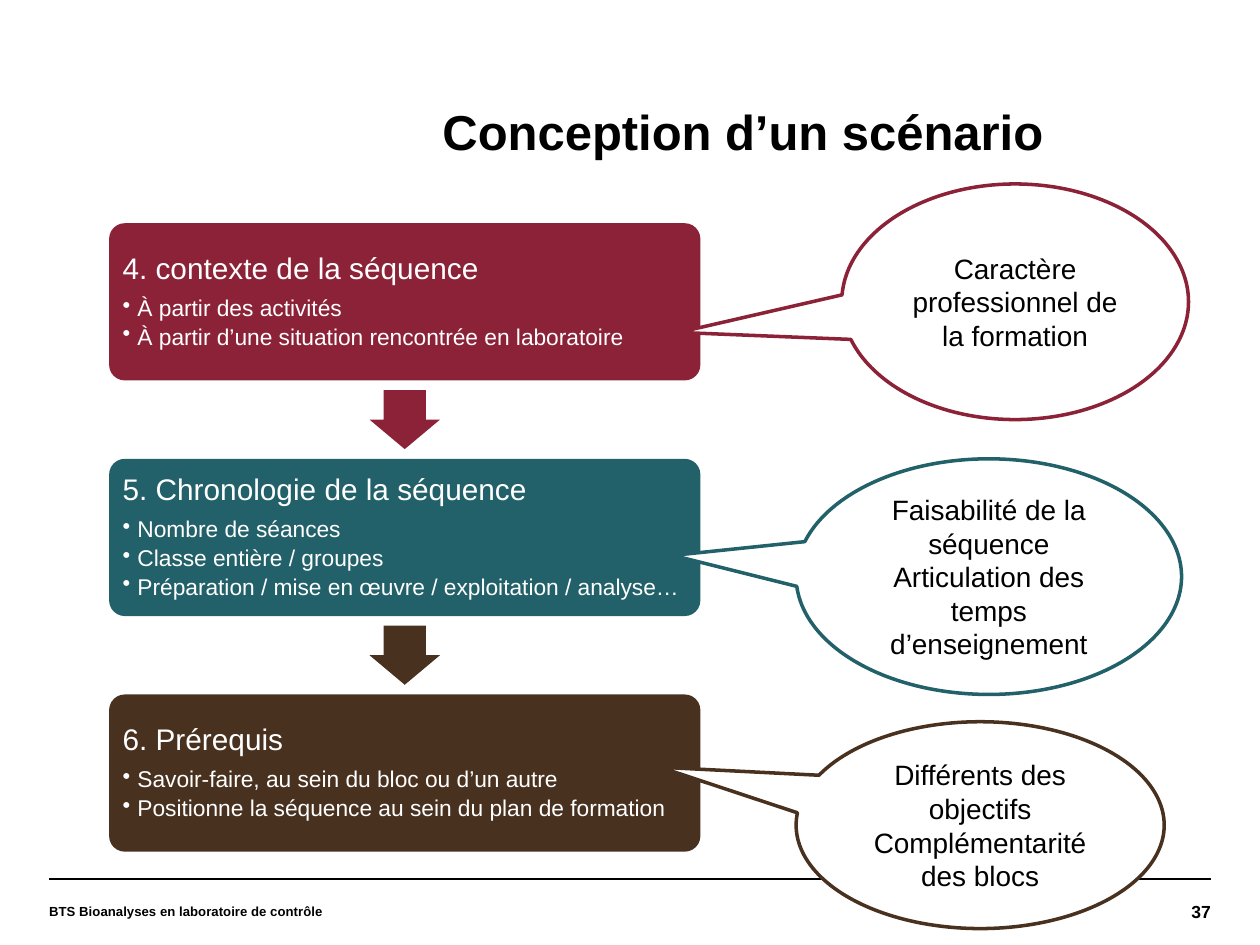
from collections import namedtuple
from dataclasses import dataclass
from lxml.etree import SubElement
from pptx import Presentation
from pptx.dml.color import RGBColor
from pptx.enum.shapes import MSO_CONNECTOR, MSO_SHAPE
from pptx.enum.text import MSO_ANCHOR, PP_ALIGN
from pptx.oxml.ns import qn
from pptx.util import Cm, Pt


@dataclass(frozen=True)
class Theme:
    font: str = "Arial"
    black: str = "000000"
    white: str = "FFFFFF"
    wine: str = "8C2237"
    teal: str = "226169"
    brown: str = "49311F"
    title: float = 28
    head: float = 17
    item: float = 13
    bubble: float = 16
    footer: float = 7.5
    number: float = 10


THEME = Theme()
Box = namedtuple("Box", "left top width height")

STEPS = [
    ("4. contexte de la séquence",
     ["À partir des activités",
      "À partir d’une situation rencontrée en laboratoire"], THEME.wine),
    ("5. Chronologie de la séquence",
     ["Nombre de séances", "Classe entière / groupes",
      "Préparation / mise en œuvre / exploitation / analyse…"], THEME.teal),
    ("6. Prérequis",
     ["Savoir-faire, au sein du bloc ou d’un autre",
      "Positionne la séquence au sein du plan de formation"], THEME.brown),
]
ARROWS = [THEME.wine, THEME.brown]
BUBBLES = [
    (Box(16.97, 3.71, 6.99, 4.75), (-0.97, 0.13), THEME.wine,
     ["Caractère professionnel de la formation"]),
    (Box(16.05, 9.25, 7.77, 4.75), (-0.82, -0.09), THEME.teal,
     ["Faisabilité de la séquence",
      "Articulation des temps d’enseignement"]),
    (Box(16.05, 14.55, 7.42, 4.17), (-0.87, -0.28), THEME.brown,
     ["Différents des objectifs", "Complémentarité des blocs"]),
]


def color(code):
    return RGBColor.from_string(code)


def place(box):
    return [Cm(part) for part in box]


def style(par, size, tone, bold=False, align=PP_ALIGN.LEFT):
    par.alignment = align
    for run in par.runs:
        font = run.font
        font.name, font.size, font.bold = THEME.font, Pt(size), bold
        font.color.rgb = color(tone)


def pad(frame, across, down, anchor=MSO_ANCHOR.MIDDLE):
    frame.word_wrap = True
    frame.vertical_anchor = anchor
    frame.margin_left = frame.margin_right = Cm(across)
    frame.margin_top = frame.margin_bottom = Cm(down)


def add_shape(slide, kind, box, fill, levels):
    shape = slide.shapes.add_shape(kind, *place(box))
    shape.shadow.inherit = False
    shape.fill.solid()
    shape.fill.fore_color.rgb = color(fill)
    shape.line.fill.background()
    for index, level in enumerate(levels):
        shape.adjustments[index] = level
    return shape


def add_title(slide, box, text):
    title = slide.shapes.title
    title.left, title.top, title.width, title.height = place(box)
    frame = title.text_frame
    pad(frame, 0, 0, MSO_ANCHOR.TOP)
    frame.text = text
    frame.paragraphs[0].line_spacing = 0.9
    style(frame.paragraphs[0], THEME.title, THEME.black, True)


def add_label(slide, box, text, size, align):
    frame = slide.shapes.add_textbox(*place(box)).text_frame
    pad(frame, 0, 0)
    frame.text = text
    style(frame.paragraphs[0], size, THEME.black, True, align)


def add_footer(slide, box):
    right = box.left + box.width
    line = slide.shapes.add_connector(
        MSO_CONNECTOR.STRAIGHT, *place((box.left, box.top, right, box.top)))
    SubElement(line._element.spPr, qn("a:effectLst"))
    line.line.color.rgb = color(THEME.black)
    line.line.width = Pt(0.8)
    add_label(slide, box._replace(width=16.38),
              "BTS Bioanalyses en laboratoire de contrôle",
              THEME.footer, PP_ALIGN.LEFT)
    add_label(slide, box._replace(left=right - 2.64, width=2.64), "37",
              THEME.number, PP_ALIGN.RIGHT)


def add_bullet(par):
    props = par._p.get_or_add_pPr()
    props.set("marL", str(Cm(0.3)))
    props.set("indent", str(-Cm(0.3)))
    SubElement(props, qn("a:buChar")).set("char", "•")
    par.level = 1


def add_card(slide, box, head, items, fill):
    card = add_shape(slide, MSO_SHAPE.ROUNDED_RECTANGLE, box, fill, [0.1])
    frame = card.text_frame
    pad(frame, 0.18, 0.18)
    frame.text = "\n".join([head, *items])
    for index, par in enumerate(frame.paragraphs):
        if index:
            add_bullet(par)
        par.line_spacing = 0.9
        par.space_after = Pt(2.3 if index else 6.5)
        style(par, THEME.item if index else THEME.head, THEME.white)


def add_flow(slide, box):
    height, wide, tall = 3.17, 1.42, 1.19
    pitch = (box.height - height) / (len(STEPS) - 1)
    for index, step in enumerate(STEPS):
        top = box.top + index * pitch
        add_card(slide, Box(box.left, top, box.width, height), *step)
    for index, fill in enumerate(ARROWS):
        top = box.top + index * pitch + (height + pitch - tall) / 2
        left = box.left + (box.width - wide) / 2
        add_shape(slide, MSO_SHAPE.DOWN_ARROW, Box(left, top, wide, tall),
                  fill, [0.6, 0.5])


def add_bubble(slide, box, tip, tone, lines):
    bubble = add_shape(slide, MSO_SHAPE.OVAL_CALLOUT, box, THEME.white, tip)
    bubble.line.color.rgb = color(tone)
    bubble.line.width = Pt(2)
    frame = bubble.text_frame
    pad(frame, 0.25, 0.13)
    frame.text = "\n".join(lines)
    for par in frame.paragraphs:
        style(par, THEME.bubble, THEME.black, align=PP_ALIGN.CENTER)


def main():
    deck = Presentation()
    deck.slide_width, deck.slide_height = Cm(25.4), Cm(19.05)
    slide = deck.slides.add_slide(deck.slide_layouts[5])
    add_title(slide, Box(8.92, 2.18, 17.22, 2.29), "Conception d’un scénario")
    add_footer(slide, Box(0.99, 17.72, 23.42, 1.32))
    add_flow(slide, Box(2.2, 4.5, 11.92, 12.67))
    for bubble in BUBBLES:
        add_bubble(slide, *bubble)
    deck.save("out.pptx")


if __name__ == "__main__":
    main()
